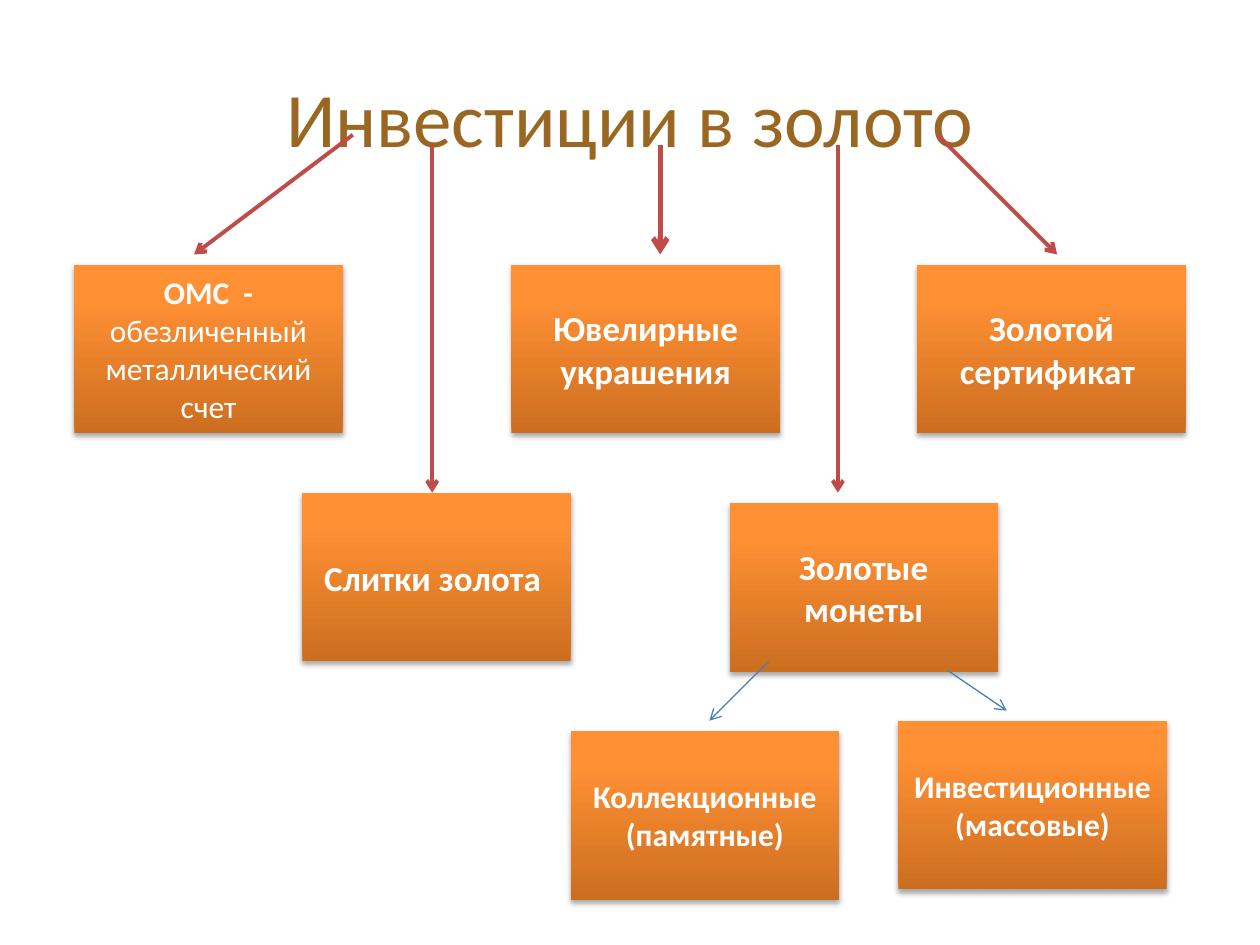
from copy import deepcopy
from dataclasses import dataclass

from lxml.etree import SubElement
from pptx import Presentation
from pptx.dml.color import RGBColor
from pptx.enum.shapes import MSO_CONNECTOR, MSO_SHAPE
from pptx.enum.text import MSO_ANCHOR, PP_ALIGN
from pptx.oxml.ns import qn
from pptx.util import Inches, Pt


@dataclass(frozen=True)
class Theme:
    font: str = "Calibri"
    title_color: str = "996721"
    text_color: str = "FFFFFF"
    red: str = "BF4C48"
    blue: str = "4B7EBC"
    gradient: tuple = ((0, "CC6E20"), (0.8, "FF9034"), (1, "FF9136"))
    title_size: int = 44
    large: int = 20
    small: int = 18
    box_width: float = 2.13
    box_height: float = 1.34


@dataclass(frozen=True)
class Card:
    left: float
    top: float
    size: int
    heading: str
    detail: str = ""


@dataclass(frozen=True)
class Arrow:
    start: tuple[float, float]
    end: tuple[float, float]
    color: str
    width: float = 2.25


THEME = Theme()
TOP_ROW = 2.1
CARDS = (
    Card(0.59, TOP_ROW, THEME.small, "ОМС  - ", "обезличенный металлический счет"),
    Card(2.4, 3.91, THEME.large, "Слитки золота "),
    Card(4.06, TOP_ROW, THEME.large, "Ювелирные украшения"),
    Card(7.28, TOP_ROW, THEME.large, "Золотой сертификат "),
    Card(5.79, 3.99, THEME.large, "Золотые монеты"),
    Card(4.53, 5.8, THEME.small, "Коллекционные (памятные)"),
    Card(7.13, 5.72, THEME.small, "Инвестиционные (массовые)"),
)
FIRST_ARROW = Arrow((2.8, 1.07), (1.54, 2.02), THEME.red)
ARROWS = (
    Arrow((3.43, 1.15), (3.43, 3.91), THEME.red),
    Arrow((5.24, 1.15), (5.24, 2.02), THEME.red, 3),
    Arrow((6.65, 1.15), (6.65, 3.91), THEME.red),
    Arrow((7.44, 1.07), (8.39, 2.02), THEME.red),
    Arrow((6.1, 5.25), (5.63, 5.72), THEME.blue, 0.75),
    Arrow((7.52, 5.32), (7.99, 5.64), THEME.blue, 0.75),
)


def add_span(para, text: str, size: int, color: str, bold: bool = False) -> None:
    span = para.add_run()
    span.text = text
    span.font.name = THEME.font
    span.font.size = Pt(size)
    span.font.bold = bold
    span.font.color.rgb = RGBColor.from_string(color)


def fill_gradient(box) -> None:
    box.fill.gradient()
    box.fill.gradient_angle = 90
    stops = box._element.spPr.find(qn("a:gradFill")).find(qn("a:gsLst"))
    stops.append(deepcopy(stops[0]))
    for stop, (position, color) in zip(box.fill.gradient_stops, THEME.gradient):
        stop.position = position
        stop.color.rgb = RGBColor.from_string(color)


def add_soft_shadow(box) -> None:
    box.shadow.inherit = False
    effects = box._element.spPr.find(qn("a:effectLst"))
    shadow = SubElement(effects, qn("a:outerShdw"), blurRad=str(Pt(3.1)),
                        dist=str(Pt(1.8)), dir="5400000", rotWithShape="0")
    color = SubElement(shadow, qn("a:srgbClr"), val="000000")
    SubElement(color, qn("a:alpha"), val="35000")


def add_card(page, card: Card) -> None:
    box = page.shapes.add_shape(
        MSO_SHAPE.RECTANGLE, Inches(card.left), Inches(card.top),
        Inches(THEME.box_width), Inches(THEME.box_height))
    fill_gradient(box)
    box.line.fill.background()
    add_soft_shadow(box)
    box.text_frame.word_wrap = True
    box.text_frame.vertical_anchor = MSO_ANCHOR.MIDDLE
    para = box.text_frame.paragraphs[0]
    para.alignment = PP_ALIGN.CENTER
    add_span(para, card.heading, card.size, THEME.text_color, bold=True)
    if card.detail:
        add_span(para, card.detail, card.size, THEME.text_color)


def add_arrow(page, arrow: Arrow) -> None:
    points = [Inches(value) for value in (*arrow.start, *arrow.end)]
    connector = page.shapes.add_connector(MSO_CONNECTOR.STRAIGHT, *points)
    connector.line.color.rgb = RGBColor.from_string(arrow.color)
    connector.line.width = Pt(arrow.width)
    SubElement(connector.line._get_or_add_ln(), qn("a:tailEnd"), type="arrow")
    SubElement(connector._element.spPr, qn("a:effectLst"))


def add_title(page, text: str) -> None:
    title = page.shapes.title
    title.left, title.top = Inches(0.5), Inches(0.3)
    title.width, title.height = Inches(9), Inches(1.25)
    title.text_frame.vertical_anchor = MSO_ANCHOR.MIDDLE
    para = title.text_frame.paragraphs[0]
    para.alignment = PP_ALIGN.CENTER
    add_span(para, text, THEME.title_size, THEME.title_color)


def main() -> None:
    deck = Presentation()
    deck.slide_width, deck.slide_height = Inches(10), Inches(7.5)
    page = deck.slides.add_slide(deck.slide_layouts[5])
    add_title(page, "Инвестиции в золото")
    add_arrow(page, FIRST_ARROW)
    for card in CARDS:
        add_card(page, card)
    for arrow in ARROWS:
        add_arrow(page, arrow)
    deck.save("out.pptx")


if __name__ == "__main__":
    main()
